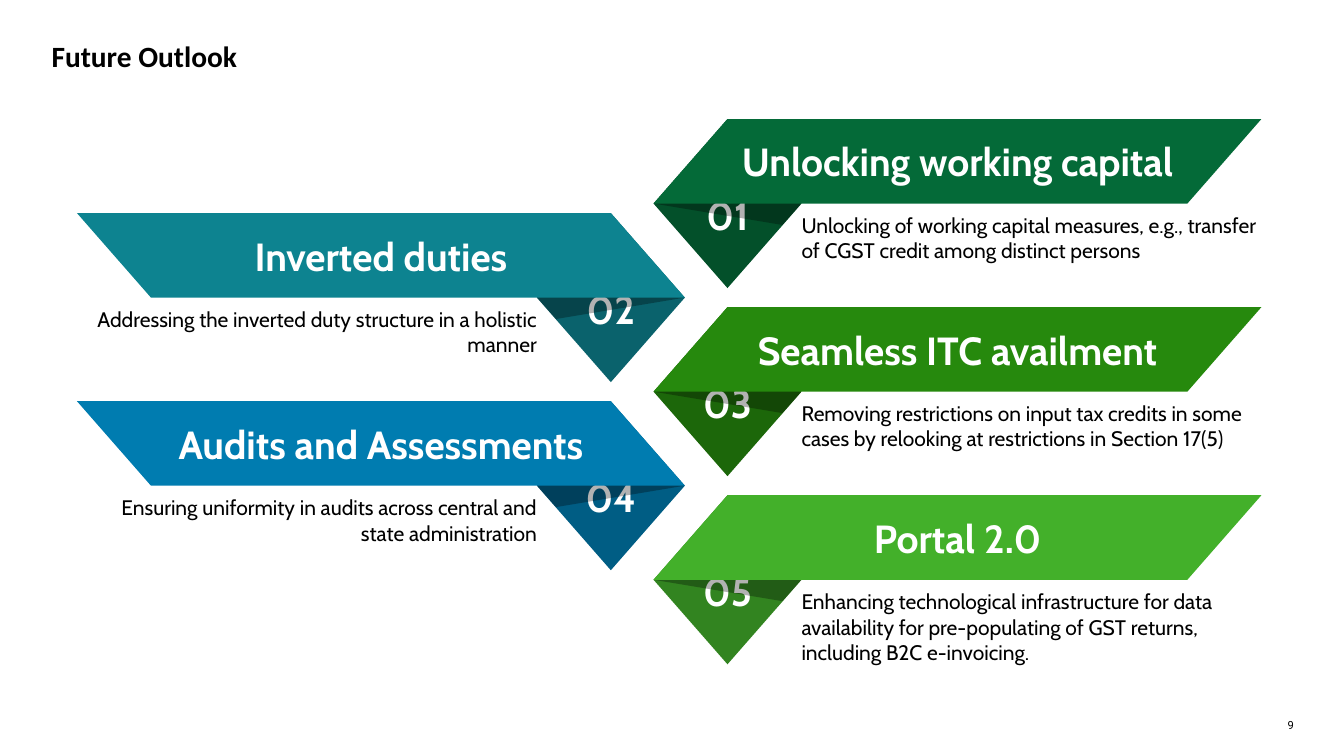
from lxml import etree
from pptx import Presentation
from pptx.dml.color import RGBColor
from pptx.enum.text import MSO_ANCHOR, PP_ALIGN
from pptx.oxml.ns import qn
from pptx.util import Cm, Pt

BANNER_WIDTH, BANNER_HEIGHT = 15.32, 2.13
DIAMOND_WIDTH = 3.73
SLANT = DIAMOND_WIDTH / 2
LEFT_COLUMN, RIGHT_COLUMN = 1.94, 16.47
FIRST_TOP, ROW_STEP = 3.0, 2.37

TITLE = {"name": "Calibri", "size": Pt(21), "bold": True}
HEADING = {"name": "Cabin", "size": Pt(28), "bold": True}
BODY = {"name": "Cabin", "size": Pt(15), "bold": False}
PAGE_NUMBER = {"name": "Roboto", "size": Pt(8), "bold": False}

TOPICS = [
    ("Unlocking working capital", "046A38", "03502A", 1.55,
     "Unlocking of working capital measures, e.g., transfer of CGST credit among distinct persons"),
    ("Inverted duties", "0D8390", "0A626C", 1.55,
     "Addressing the inverted duty structure in a holistic manner"),
    ("Seamless ITC availment", "26890D", "1C670A", 1.55,
     "Removing restrictions on input tax credits in some cases by relooking at restrictions in Section 17(5)"),
    ("Audits and Assessments", "007CB0", "005D84", 1.55,
     "Ensuring uniformity in audits across central and state administration"),
    ("Portal 2.0", "43B02A", "328420", 2.18,
     "Enhancing technological infrastructure for data availability for pre-populating of GST returns, "
     "including B2C e-invoicing."),
]


def color(hex_string):
    return RGBColor.from_string(hex_string)


def write_text(shape, text, font_format, hex_string, alignment, anchor, margins):
    frame = shape.text_frame
    left, top, right, bottom = (Cm(margin) for margin in margins)
    frame_format = {
        "word_wrap": True, "vertical_anchor": anchor,
        "margin_left": left, "margin_top": top,
        "margin_right": right, "margin_bottom": bottom,
    }
    for name, value in frame_format.items():
        setattr(frame, name, value)
    paragraph = frame.paragraphs[0]
    paragraph.alignment = alignment
    run = paragraph.add_run()
    run.text = text
    for name, value in font_format.items():
        setattr(run.font, name, value)
    run.font.color.rgb = color(hex_string)


def add_text(slide, box, text, font_format, alignment=PP_ALIGN.LEFT, margins=(0, 0, 0, 0)):
    shape = slide.shapes.add_textbox(*(Cm(length) for length in box))
    write_text(shape, text, font_format, "000000", alignment, MSO_ANCHOR.TOP, margins)


def add_polygon(slide, points, hex_string):
    corners = [(Cm(x), Cm(y)) for x, y in points]
    builder = slide.shapes.build_freeform(*corners[0])
    builder.add_line_segments(corners[1:])
    shape = builder.convert_to_shape()
    shape.shadow.inherit = False
    shape.fill.solid()
    shape.fill.fore_color.rgb = color(hex_string)
    shape.line.fill.background()
    return shape


def make_transparent(shape, opacity_percent):
    fill_color = shape.fill._xPr.find(qn("a:solidFill"))[0]
    alpha = etree.SubElement(fill_color, qn("a:alpha"))
    alpha.set("val", str(opacity_percent * 1000))


def add_topic(slide, left, top, mirrored, number, topic):
    heading, banner_color, diamond_color, body_height, body = topic

    def place(points):
        return [(left + (BANNER_WIDTH - x if mirrored else x), top + y) for x, y in points]

    diamond = add_polygon(slide, place([
        (SLANT, 0), (0, BANNER_HEIGHT), (SLANT, 2 * BANNER_HEIGHT), (DIAMOND_WIDTH, BANNER_HEIGHT),
    ]), diamond_color)
    write_text(diamond, f"{number:02}", HEADING, "FFFFFF", PP_ALIGN.CENTER,
               MSO_ANCHOR.MIDDLE, (0.08, 0.64, 0.08, 0.08))

    shade_peak = (1.73, 1.12) if mirrored else (2.11, 1.33)
    shade = add_polygon(slide, place([
        shade_peak, (DIAMOND_WIDTH, BANNER_HEIGHT), (3.25, 2.67), (0, BANNER_HEIGHT),
    ]), "000000")
    make_transparent(shade, 30)

    banner = add_polygon(slide, place([
        (SLANT, 0), (0, BANNER_HEIGHT), (BANNER_WIDTH - SLANT, BANNER_HEIGHT), (BANNER_WIDTH, 0),
    ]), banner_color)
    write_text(banner, heading, HEADING, "FFFFFF", PP_ALIGN.CENTER,
               MSO_ANCHOR.MIDDLE, (0.08, 0.08, 0.08, 0.08))

    body_left = left if mirrored else left + DIAMOND_WIDTH
    alignment = PP_ALIGN.RIGHT if mirrored else PP_ALIGN.LEFT
    body_box = (body_left, top + BANNER_HEIGHT + 0.1, BANNER_WIDTH - DIAMOND_WIDTH, body_height)
    add_text(slide, body_box, body, BODY, alignment, (0, 0.13, 0, 0.13))


def add_outlook_slide(presentation):
    slide = presentation.slides.add_slide(presentation.slide_layouts[6])
    add_text(slide, (1.3, 0.97, 31.32, 0.94), "Future Outlook", TITLE)
    for index, topic in enumerate(TOPICS):
        mirrored = index % 2 == 1
        left = LEFT_COLUMN if mirrored else RIGHT_COLUMN
        add_topic(slide, left, FIRST_TOP + index * ROW_STEP, mirrored, index + 1, topic)
    add_text(slide, (31.75, 18.11, 0.86, 0.33), "9", PAGE_NUMBER, PP_ALIGN.RIGHT)


def main():
    presentation = Presentation()
    presentation.slide_width = Cm(33.87)
    presentation.slide_height = Cm(19.05)
    add_outlook_slide(presentation)
    presentation.save("out.pptx")


if __name__ == "__main__":
    main()
